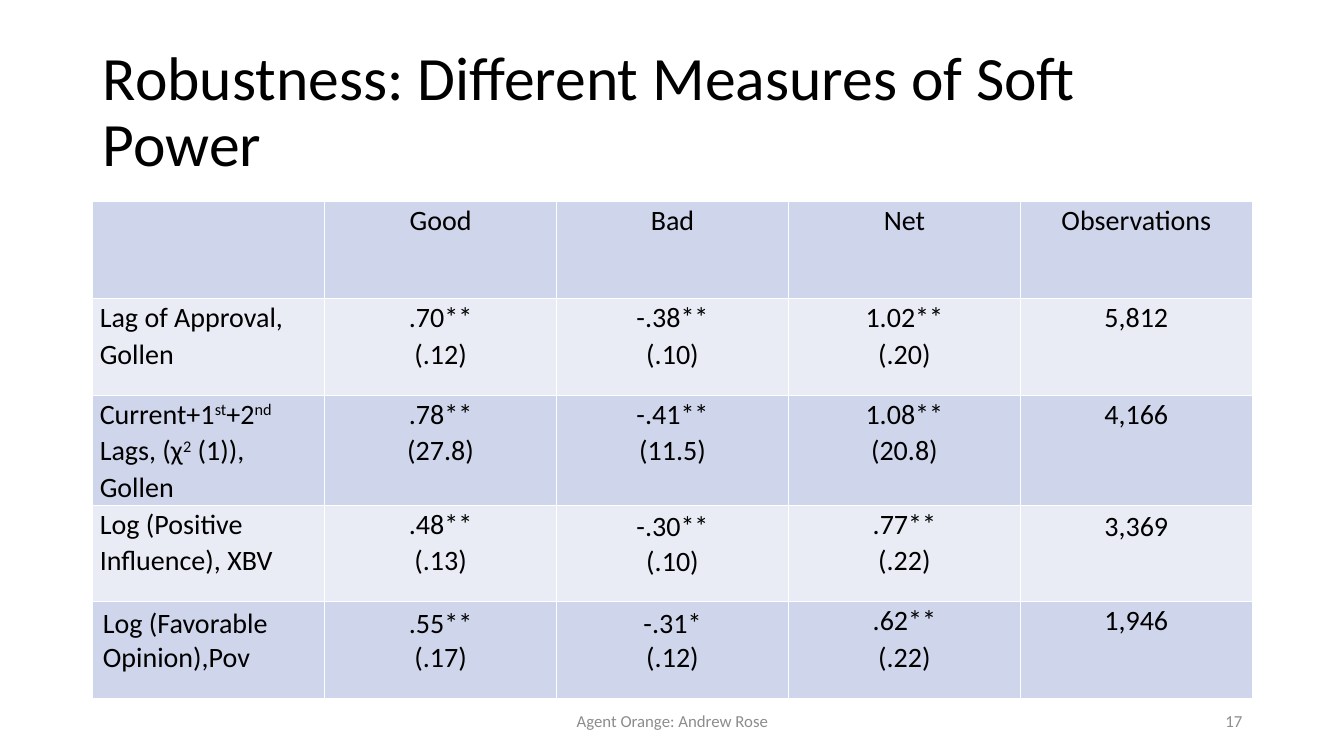
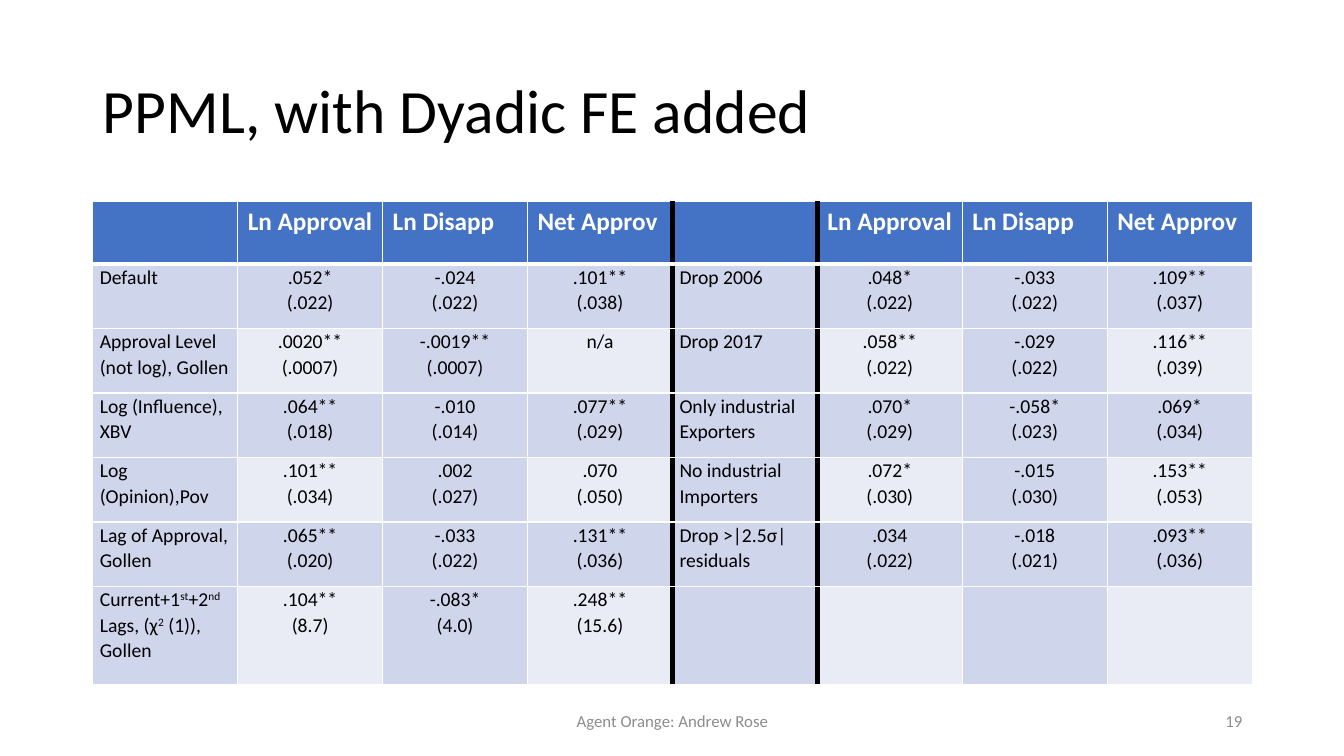
import pptx
import pptx.util
import pptx.dml.color
import pptx.enum.text
import pptx.oxml.ns
from lxml import etree

PX = 9144
FONT = "Calibri"
COLORS = {
    "text": "000000",
    "header_text": "FFFFFF",
    "footer": "8C8C8C",
    "header": "4472C4",
    "dark_band": "CFD5EA",
    "light_band": "E9EBF5",
    "grid": "FFFFFF",
    "divider": "000000",
}
ALIGN = pptx.enum.text.PP_ALIGN
MIDDLE = pptx.enum.text.MSO_ANCHOR.MIDDLE
SLIDE_SIZE = (1333, 750)
TITLE_BOX = (92, 40, 1150, 145)
FOOTER_BOX = (442, 695, 450, 40)
NUMBER_BOX = (942, 695, 300, 40)
FOOTER = "Agent Orange: Andrew Rose"
LAGS = "Current+1^st^+2^nd^ Lags, (χ^2^ (1)), Gollen"

MEASURES = [
    ["", "Good", "Bad", "Net", "Observations"],
    ["Lag of Approval, Gollen", ".70**\n(.12)", "-.38**\n(.10)", "1.02**\n(.20)", "5,812"],
    [LAGS, ".78**\n(27.8)", "-.41**\n(11.5)", "1.08**\n(20.8)", "4,166"],
    ["Log (Positive Influence), XBV", ".48**\n(.13)", "-.30**\n(.10)", ".77**\n(.22)", "3,369"],
    ["Log (Favorable Opinion),Pov", ".55**\n(.17)", "-.31*\n(.12)", ".62**\n(.22)", "1,946"],
]
ROOMY_MEASURES = {(3, 2), (3, 4), (4, 0), (4, 1), (4, 2)}

DYADIC = [
    ["", "Ln Approval", "Ln Disapp", "Net Approv"] * 2,
    ["Default", ".052*\n(.022)", "-.024\n(.022)", ".101**\n(.038)",
     "Drop 2006", ".048*\n(.022)", "-.033\n(.022)", ".109**\n(.037)"],
    ["Approval Level (not log), Gollen", ".0020**\n(.0007)", "-.0019**\n(.0007)", "n/a",
     "Drop 2017", ".058**\n(.022)", "-.029\n(.022)", ".116**\n(.039)"],
    ["Log (Influence), XBV", ".064**\n(.018)", "-.010\n(.014)", ".077**\n(.029)",
     "Only industrial Exporters", ".070*\n(.029)", "-.058*\n(.023)", ".069*\n(.034)"],
    ["Log (Opinion),Pov", ".101**\n(.034)", ".002\n(.027)", ".070\n(.050)",
     "No industrial Importers", ".072*\n(.030)", "-.015\n(.030)", ".153**\n(.053)"],
    ["Lag of Approval, Gollen", ".065**\n(.020)", "-.033\n(.022)", ".131**\n(.036)",
     "Drop >|2.5σ| residuals", ".034\n(.022)", "-.018\n(.021)", ".093**\n(.036)"],
    [LAGS, ".104**\n(8.7)", "-.083*\n(4.0)", ".248**\n(15.6)", "", "", "", ""],
]


def emu(box):
    """Turn pixel lengths into EMU."""
    return [pptx.util.Emu(length * PX) for length in box]


def rgb(name):
    """Look up a named colour."""
    return pptx.dml.color.RGBColor.from_string(COLORS[name])


def write(frame, text, size, color="text", align=ALIGN.LEFT, spacing=None, bold=False):
    """Write lines of text, with superscripts between carets."""
    for index, line in enumerate(text.split("\n")):
        paragraph = frame.add_paragraph() if index else frame.paragraphs[0]
        paragraph.alignment = align
        if spacing:
            paragraph.line_spacing = spacing
        for part, words in enumerate(line.split("^")):
            run = paragraph.add_run()
            run.text = words
            run.font.name = FONT
            run.font.size = pptx.util.Pt(size)
            run.font.bold = bold
            run.font.color.rgb = rgb(color)
            if part % 2:
                run._r.get_or_add_rPr().set("baseline", "30000")


def add_title(slide, box, text):
    """Place and format the title."""
    title = slide.shapes.title
    title.left, title.top, title.width, title.height = emu(box)
    frame = title.text_frame
    frame.auto_size = pptx.enum.text.MSO_AUTO_SIZE.NONE
    frame.word_wrap = True
    frame.vertical_anchor = MIDDLE
    write(frame, text, 44, spacing=0.9)


def add_footer(slide, box, text, align):
    """Add one grey footer text."""
    frame = slide.shapes.add_textbox(*emu(box)).text_frame
    frame.word_wrap = True
    frame.vertical_anchor = MIDDLE
    write(frame, text, 12, "footer", align)


def set_borders(cell, borders):
    """Draw the cell edges given as side: (colour, points)."""
    properties = cell._tc.get_or_add_tcPr()
    for side in "LRTB":
        color, points = borders[side]
        line = etree.SubElement(properties, pptx.oxml.ns.qn(f"a:ln{side}"),
                                w=str(pptx.util.Pt(points)))
        fill = etree.SubElement(line, pptx.oxml.ns.qn("a:solidFill"))
        etree.SubElement(fill, pptx.oxml.ns.qn("a:srgbClr"), val=COLORS[color])


def add_results(slide, box, rows, heights, size, style_cell):
    """Add a results table whose cells follow the given style rule."""
    count = len(rows[0])
    table = slide.shapes.add_table(len(rows), count, *emu(box)).table
    table.first_row = table.horz_banding = False
    for column in table.columns:
        column.width = pptx.util.Emu(box[2] * PX // count)
    for row, (texts, height) in enumerate(zip(rows, heights)):
        table.rows[row].height = pptx.util.Emu(height * PX)
        for column, text in enumerate(texts):
            cell = table.cell(row, column)
            style = style_cell(row, column)
            grid = dict.fromkeys("LRTB", ("grid", 1))
            set_borders(cell, grid | style.get("borders", {}))
            cell.fill.solid()
            cell.fill.fore_color.rgb = rgb(style["fill"])
            roomy = style.get("roomy", False)
            if not roomy:
                cell.margin_left = cell.margin_right = pptx.util.Emu(7 * PX)
                cell.margin_top = cell.margin_bottom = 0
            if text:
                header = style["fill"] == "header"
                write(cell.text_frame, text, 18 if header else size,
                      "header_text" if header else "text",
                      style["align"], None if roomy else 1.07, header)


def measures_style(row, column):
    """Style the table of soft power measures."""
    return {
        "fill": "light_band" if row % 2 else "dark_band",
        "align": ALIGN.CENTER if column else ALIGN.LEFT,
        "roomy": (row, column) in ROOMY_MEASURES,
    }


def dyadic_style(row, column):
    """Style the two-part table with its divided label column."""
    borders = {}
    if column in (3, 4):
        borders["R"] = ("divider", 4.5)
    if column in (4, 5):
        borders["L"] = ("divider", 4.5)
    if row == 0:
        borders["B"] = ("grid", 3)
        return {"fill": "header", "align": ALIGN.LEFT, "roomy": True, "borders": borders}
    if row == 1:
        borders["T"] = ("grid", 3)
    light = row % 2 == 0 and column % 2
    return {
        "fill": "light_band" if light else "dark_band",
        "align": ALIGN.CENTER if column % 4 else ALIGN.LEFT,
        "borders": borders,
    }


def add_results_slide(deck, title, number, rows, heights, size, style_cell):
    """Build one slide with title, results table and footers."""
    slide = deck.slides.add_slide(deck.slide_layouts[5])
    add_title(slide, TITLE_BOX, title)
    add_results(slide, (92, 200, 1150, sum(heights)), rows, heights, size, style_cell)
    add_footer(slide, FOOTER_BOX, FOOTER, ALIGN.CENTER)
    add_footer(slide, NUMBER_BOX, str(number), ALIGN.RIGHT)


def main():
    """Build and save the deck."""
    deck = pptx.Presentation()
    deck.slide_width, deck.slide_height = emu(SLIDE_SIZE)
    add_results_slide(deck, "Robustness: Different Measures of Soft Power", 17,
                      MEASURES, [96] * 5, 20, measures_style)
    add_results_slide(deck, "PPML, with Dyadic FE added", 19,
                      DYADIC, [62] + [64] * 5 + [97], 14, dyadic_style)
    deck.save("out.pptx")


if __name__ == "__main__":
    main()
